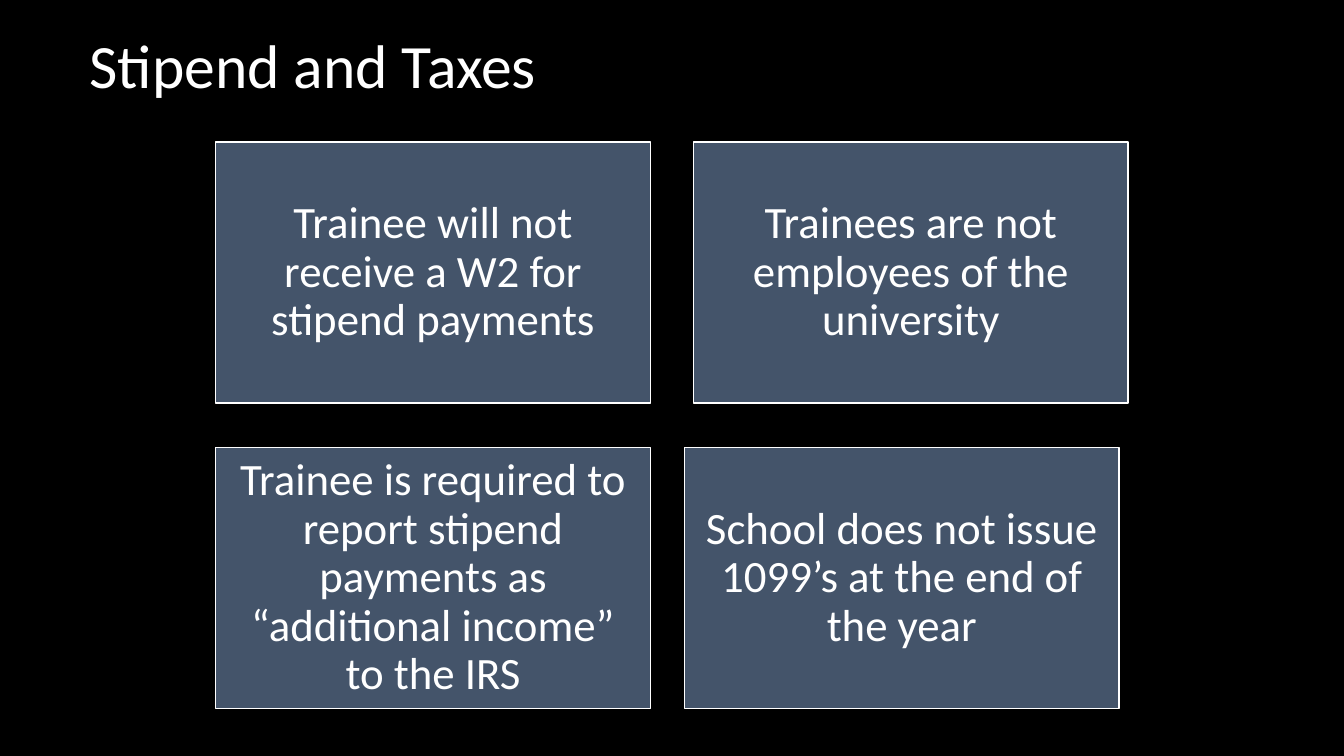
from dataclasses import dataclass

from pptx import Presentation
from pptx.dml.color import RGBColor
from pptx.enum.shapes import MSO_SHAPE
from pptx.enum.text import MSO_ANCHOR, PP_ALIGN
from pptx.util import Inches, Pt


@dataclass(frozen=True)
class Theme:
    """Colours, font and type sizes of the slide."""
    back: str = "000000"
    card: str = "44546A"
    ink: str = "FFFFFF"
    font: str = "Calibri"
    title: int = 44
    body: int = 32
    line: int = 1


THEME = Theme()
CARD_W, CARD_H = 4.31, 2.59
LEFT, TOP = 2.14, 1.41
ROW_STEP = 3.03
ROW_GAPS = (0.43, 0.34)
CARDS = (
    ("Trainee will not receive a W2 for stipend payments",
     "Trainees are not employees of the university"),
    ("Trainee is required to report stipend payments as “additional income” to the IRS",
     "School does not issue 1099’s at the end of the year"),
)


def paint(fill, color):
    """Give a fill one solid colour."""
    fill.solid()
    fill.fore_color.rgb = RGBColor.from_string(color)


def write(shape, text, size, align):
    """Set and format the text of a shape."""
    frame = shape.text_frame
    frame.text = text
    frame.word_wrap = True
    frame.vertical_anchor = MSO_ANCHOR.MIDDLE
    para = frame.paragraphs[0]
    para.alignment = align
    para.line_spacing = 0.9
    font = para.runs[0].font
    font.name = THEME.font
    font.size = Pt(size)
    font.color.rgb = RGBColor.from_string(THEME.ink)
    return frame


def add_title(slide, text):
    """Add the slide title."""
    box = slide.shapes.add_textbox(Inches(0.79), Inches(0.15), Inches(12), Inches(1.05))
    write(box, text, THEME.title, PP_ALIGN.LEFT)


def add_card(slide, row, col, text):
    """Add one card at its row and column."""
    left = LEFT + col * (CARD_W + ROW_GAPS[row])
    top = TOP + row * ROW_STEP
    card = slide.shapes.add_shape(
        MSO_SHAPE.RECTANGLE, Inches(left), Inches(top), Inches(CARD_W), Inches(CARD_H))
    card.shadow.inherit = False
    paint(card.fill, THEME.card)
    paint(card.line.fill, THEME.ink)
    card.line.width = Pt(THEME.line)
    frame = write(card, text, THEME.body, PP_ALIGN.CENTER)
    frame.margin_left = frame.margin_right = Inches(0.13)
    frame.margin_top = frame.margin_bottom = Inches(0.13)


def main():
    """Build and save the slide."""
    deck = Presentation()
    deck.slide_width, deck.slide_height = Inches(13.33), Inches(7.5)
    slide = deck.slides.add_slide(deck.slide_layouts[6])
    paint(slide.background.fill, THEME.back)
    add_title(slide, "Stipend and Taxes")
    for row, texts in enumerate(CARDS):
        for col, text in enumerate(texts):
            add_card(slide, row, col, text)
    deck.save("out.pptx")


if __name__ == "__main__":
    main()
